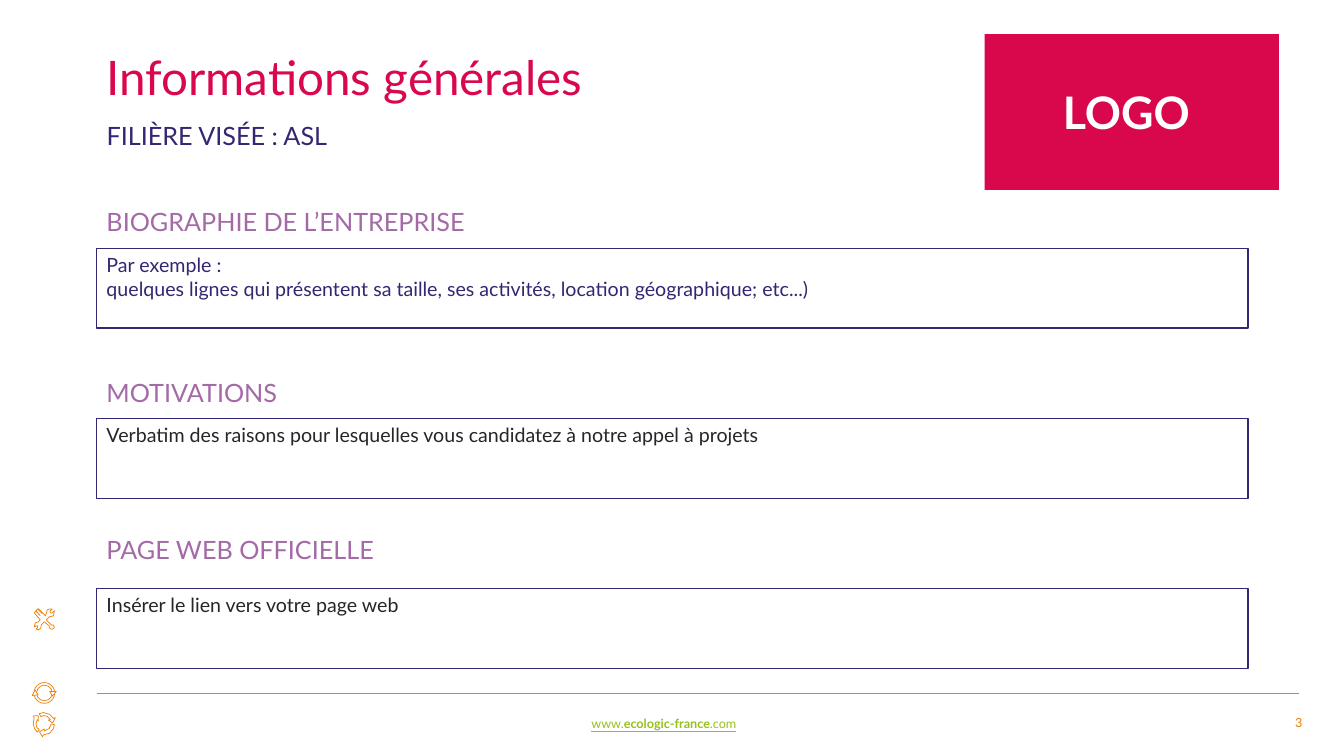
from lxml import etree
from pptx import Presentation
from pptx.dml.color import RGBColor
from pptx.enum.shapes import MSO_CONNECTOR, MSO_SHAPE
from pptx.enum.text import MSO_ANCHOR, MSO_AUTO_SIZE, PP_ALIGN
from pptx.oxml.ns import qn
from pptx.util import Pt

RECT, OVAL = MSO_SHAPE.RECTANGLE, MSO_SHAPE.OVAL
STRAIGHT = MSO_CONNECTOR.STRAIGHT
TOP, MIDDLE = MSO_ANCHOR.TOP, MSO_ANCHOR.MIDDLE
LEFT, CENTER, RIGHT = PP_ALIGN.LEFT, PP_ALIGN.CENTER, PP_ALIGN.RIGHT
GROW = MSO_AUTO_SIZE.SHAPE_TO_FIT_TEXT

FONT = "Lato"
PINK, NAVY, MAUVE = "D9084D", "362671", "A46AA7"
DARK, ORANGE, GREEN = "262626", "EE7F00", "95C11F"
GREY, WHITE = "939393", "FFFFFF"
EDGE, WIDE = 69, 822.5

# Heading, its top, box top, text colour, lines
PARTS = [
    ("BIOGRAPHIE DE L’ENTREPRISE", 144, 177.3, NAVY,
     ["Par exemple :",
      "quelques lignes qui présentent sa taille, ses activités, "
      "location géographique; etc...)"]),
    ("MOTIVATIONS", 265.9, 298.8, DARK,
     ["Verbatim des raisons pour lesquelles vous candidatez "
      "à notre appel à projets"]),
    ("PAGE WEB OFFICIELLE", 378.3, 420.3, DARK,
     ["Insérer le lien vers votre page web"]),
]

# Icon outlines in points
TOOLS = [
    (29.5, 446.4), (31.7, 444.2), (35.3, 447.1), (35.3, 448.6), (37.4, 449.6),
    (38.9, 448.2), (38.2, 446.4), (36.7, 446.4), (33.1, 442.8), (35.3, 440.6),
    (38.2, 439.9), (38.9, 436.3), (37.4, 437.8), (36, 437.8), (36, 436.3),
    (37.4, 435.2), (36, 434.9), (33.8, 435.6), (33.1, 438.5), (32.4, 439.9),
    (28.1, 435.2), (27, 434.9), (24.5, 437.8), (28.8, 442.8), (27.4, 444.2),
    (25.2, 445), (24.5, 447.8), (25.9, 447.1), (27, 447.1), (26.6, 448.6),
    (25.9, 449.3), (27.4, 450), (29.2, 448.6)]
TIPS = [
    [(40.3, 493.9), (37.4, 497.2), (35.6, 493.9)],
    [(23, 496.8), (25.2, 492.8), (27.2, 496.3)]]
ARROWS = [
    [(26.6, 522.9), (28.1, 521.3), (26.4, 519.6), (25.7, 517), (26.6, 514.1),
     (27.4, 515), (27.4, 511.2), (23.8, 511.4), (24.4, 512.6), (23.8, 517),
     (24.7, 520.4)],
    [(30.4, 526.3), (31, 524.9), (35.3, 523.8), (38, 520.8), (38.9, 517.7),
     (36.7, 517.1), (35.1, 520.4), (31.7, 522), (31.7, 520.6), (28.2, 522.7)],
    [(29.3, 511.9), (31, 511.2), (33.8, 511.7), (36, 514.1), (34.6, 514.4),
     (37.6, 516.3), (39.6, 512.6), (38.2, 513.2), (35.3, 510.2), (31, 509),
     (28.1, 509.8)]]


def color(code):
    return RGBColor.from_string(code)


def style(para, size, code, bold=False, align=LEFT):
    font = para.font
    font.name, font.size, font.bold = FONT, Pt(size), bold
    font.color.rgb = color(code)
    para.alignment = align


def paint(shape, line=None, fill=None, width=0.75):
    shape.shadow.inherit = False
    if fill:
        shape.fill.solid()
        shape.fill.fore_color.rgb = color(fill)
    else:
        shape.fill.background()
    if line:
        shape.line.color.rgb = color(line)
        shape.line.width = Pt(width)
    else:
        shape.line.fill.background()


def place(shape, x, y, w, h):
    shape.left, shape.top, shape.width, shape.height = map(Pt, (x, y, w, h))


def holder(shape, y, h, text, size, code):
    place(shape, EDGE, y, WIDE, h)
    frame = shape.text_frame
    frame.auto_size, frame.vertical_anchor = GROW, TOP
    frame.text = text
    para = frame.paragraphs[0]
    props = para._p.get_or_add_pPr()
    props.set("marL", "0")
    props.set("indent", "0")
    etree.SubElement(props, qn("a:buNone"))
    para.space_before = Pt(0)
    style(para, size, code)
    return para


def label(slide, x, y, w, h, runs, size, code, align=LEFT):
    frame = slide.shapes.add_textbox(*map(Pt, (x, y, w, h))).text_frame
    frame.word_wrap, frame.auto_size = True, GROW
    para = frame.paragraphs[0]
    style(para, size, code, align=align)
    for text in runs:
        para.add_run().text = text
    return para


def box(slide, x, y, w, h, lines, size, code, line=None, fill=None,
        bold=False, align=LEFT, anchor=TOP):
    shape = slide.shapes.add_shape(RECT, *map(Pt, (x, y, w, h)))
    paint(shape, line, fill)
    frame = shape.text_frame
    frame.word_wrap, frame.vertical_anchor = True, anchor
    frame.text = "\n".join(lines)
    for para in frame.paragraphs:
        style(para, size, code, bold, align)


def rule(slide, x, y, end, down, code, width):
    line = slide.shapes.add_connector(STRAIGHT, *map(Pt, (x, y, end, down)))
    line.line.color.rgb = color(code)
    line.line.width = Pt(width)
    etree.SubElement(line._element.spPr, qn("a:effectLst"))


def outline(slide, points, fill=None):
    spots = [(Pt(x), Pt(y)) for x, y in points]
    build = slide.shapes.build_freeform(*spots[0], scale=1.0)
    build.add_line_segments(spots[1:], close=True)
    paint(build.convert_to_shape(), ORANGE, fill, 0.5)


def icons(slide):
    # Crossed tools
    outline(slide, TOOLS)
    for y in (434.9, 436.3):
        x = 461.7 - y
        rule(slide, x, y, x + 3.4, y + 3.4, ORANGE, 0.5)
    # Ring with two tips
    for r in (7.4, 5.6):
        ring = slide.shapes.add_shape(
            OVAL, *map(Pt, (31.7 - r, 495 - r, 2 * r, 2 * r)))
        paint(ring, ORANGE, width=0.5)
    for tip in TIPS:
        outline(slide, tip, WHITE)
    # Three chasing arrows
    for arrow in ARROWS:
        outline(slide, arrow)


def footer(slide):
    rule(slide, EDGE, 495.3, 928, 495.3, GREY, 0.75)
    site = label(slide, 415.4, 507.6, 377, 18,
                 ["www.", "ecologic-france", ".com"], 9, GREEN)
    site.font.underline = True
    site.runs[1].font.bold = True
    label(slide, 891.4, 506.9, 46, 18, ["3"], 9, ORANGE, RIGHT)


def main():
    deck = Presentation()
    deck.slide_width, deck.slide_height = Pt(960), Pt(540)
    slide = deck.slides.add_slide(deck.slide_layouts[1])

    # Title and subtitle
    title = holder(slide.shapes.title, 35.3, 44.6,
                   "Informations générales", 34, PINK)
    title.line_spacing = 0.9
    holder(slide.placeholders[1], 82, 29, "FILIÈRE VISÉE : ASL", 18, NAVY)

    # Headed boxes
    for head, y, top, code, lines in PARTS:
        label(slide, EDGE, y, WIDE, 29, [head], 18, MAUVE)
        box(slide, EDGE, top, WIDE, 57, lines, 14, code, line=NAVY)

    # Logo area
    box(slide, 703.4, 24.4, 210.2, 111.3, ["LOGO "], 32, WHITE, fill=PINK,
        bold=True, align=CENTER, anchor=MIDDLE)

    footer(slide)
    icons(slide)
    deck.save("out.pptx")


if __name__ == "__main__":
    main()
